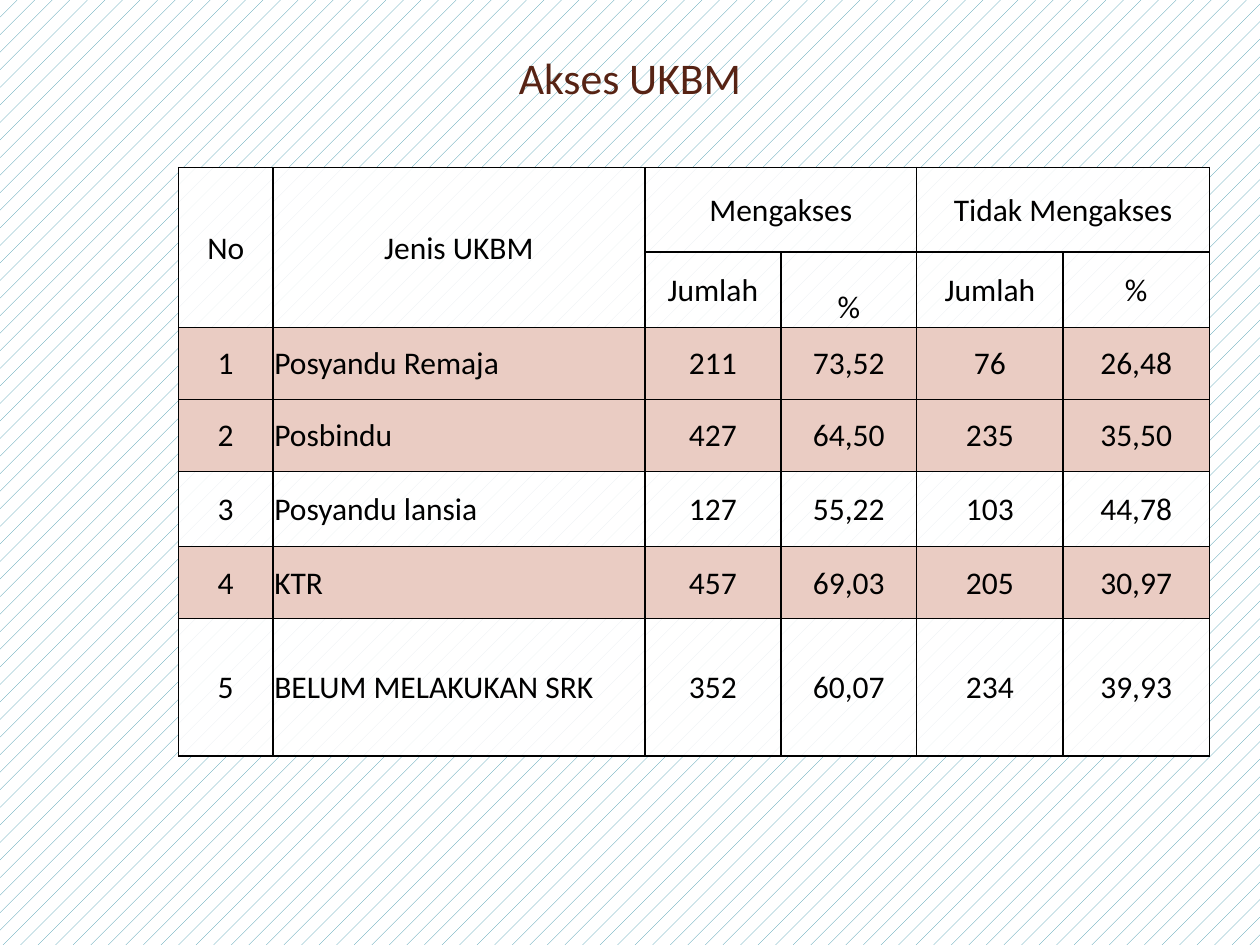
from lxml import etree
from pptx import Presentation
from pptx.dml.color import RGBColor
from pptx.enum.dml import MSO_PATTERN
from pptx.enum.text import MSO_ANCHOR, PP_ALIGN
from pptx.oxml.ns import qn
from pptx.util import Cm, Pt

LEFT, CENTER = PP_ALIGN.LEFT, PP_ALIGN.CENTER
MIDDLE, BOTTOM = MSO_ANCHOR.MIDDLE, MSO_ANCHOR.BOTTOM
DOTS = MSO_PATTERN.PERCENT_5

BLACK = RGBColor(0x00, 0x00, 0x00)
WHITE = RGBColor(0xFF, 0xFF, 0xFF)
BROWN = RGBColor(0x57, 0x23, 0x14)
TEAL = RGBColor(0x38, 0x91, 0xA7)
PALE_GREY = RGBColor(0xE8, 0xEE, 0xF1)
PINK = RGBColor(0xEA, 0xCC, 0xC3)
FONT = "Calibri"

COLUMN_WIDTHS = [1.9, 7.5, 2.74, 2.74, 2.95, 2.95]
ROW_HEIGHTS = [1.7, 1.52, 1.45, 1.45, 1.52, 1.45, 2.77]
ROWS = [
    ["No", "Jenis UKBM", "Mengakses", "", "Tidak Mengakses", ""],
    ["", "", "Jumlah", "%", "Jumlah", "%"],
    ["1", "Posyandu Remaja", "211", "73,52", "76", "26,48"],
    ["2", "Posbindu", "427", "64,50", "235", "35,50"],
    ["3", "Posyandu lansia", "127", "55,22", "103", "44,78"],
    ["4", "KTR", "457", "69,03", "205", "30,97"],
    ["5", "BELUM MELAKUKAN SRK", "352", "60,07", "234", "39,93"],
]
HEADER_ROWS = 2
NAME_COLUMN = 1
PINK_ROWS = {2, 3, 5}
# First and last cell of each merged header, as (row, column)
MERGES = [((0, 0), (1, 0)), ((0, 1), (1, 1)), ((0, 2), (0, 3)), ((0, 4), (0, 5))]


def fill_pattern(fill, color):
    fill.patterned()
    fill.pattern = DOTS
    fill.fore_color.rgb = color
    fill.back_color.rgb = WHITE


def style_paragraph(paragraph, size, color, alignment):
    paragraph.alignment = alignment
    paragraph.font.name = FONT
    paragraph.font.size = Pt(size)
    paragraph.font.color.rgb = color


def add_borders(cell):
    properties = cell._tc.get_or_add_tcPr()
    for side in ("lnL", "lnR", "lnT", "lnB"):
        line = etree.SubElement(properties, qn(f"a:{side}"), w=str(Pt(1)))
        solid = etree.SubElement(line, qn("a:solidFill"))
        etree.SubElement(solid, qn("a:srgbClr"), val=str(BLACK))


def add_title(slide, left, top, width, height):
    text_frame = slide.shapes.add_textbox(left, top, width, height).text_frame
    text_frame.word_wrap = True
    text_frame.vertical_anchor = MIDDLE
    paragraph = text_frame.paragraphs[0]
    paragraph.text = "Akses UKBM"
    style_paragraph(paragraph, 25, BROWN, CENTER)


def fill_cell(cell, text, row, column):
    # Borders come before the fill in the cell properties
    add_borders(cell)
    if row in PINK_ROWS:
        cell.fill.solid()
        cell.fill.fore_color.rgb = PINK
    else:
        fill_pattern(cell.fill, PALE_GREY)
    cell.margin_left = cell.margin_right = cell.margin_top = Cm(0.03)
    cell.margin_bottom = 0
    cell.vertical_anchor = BOTTOM if (row, column) == (1, 3) else MIDDLE
    is_name = column == NAME_COLUMN and row >= HEADER_ROWS
    cell.text = text
    style_paragraph(cell.text_frame.paragraphs[0], 18, BLACK, LEFT if is_name else CENTER)


def add_access_table(slide, left, top):
    table = slide.shapes.add_table(
        len(ROWS), len(COLUMN_WIDTHS), left, top,
        Cm(sum(COLUMN_WIDTHS)), Cm(sum(ROW_HEIGHTS))).table
    table.first_row = table.horz_banding = False
    for column, width in zip(table.columns, COLUMN_WIDTHS):
        column.width = Cm(width)
    for row, height in zip(table.rows, ROW_HEIGHTS):
        row.height = Cm(height)
    for row, texts in enumerate(ROWS):
        for column, text in enumerate(texts):
            fill_cell(table.cell(row, column), text, row, column)
    for first, last in MERGES:
        table.cell(*first).merge(table.cell(*last))


def main():
    presentation = Presentation()
    presentation.slide_width, presentation.slide_height = Cm(25.4), Cm(19.05)
    slide = presentation.slides.add_slide(presentation.slide_layouts[6])
    fill_pattern(slide.background.fill, TEAL)
    add_title(slide, Cm(1.27), Cm(0.76), Cm(22.86), Cm(1.58))
    add_access_table(slide, Cm(3.6), Cm(3.38))
    presentation.save("out.pptx")


if __name__ == "__main__":
    main()
